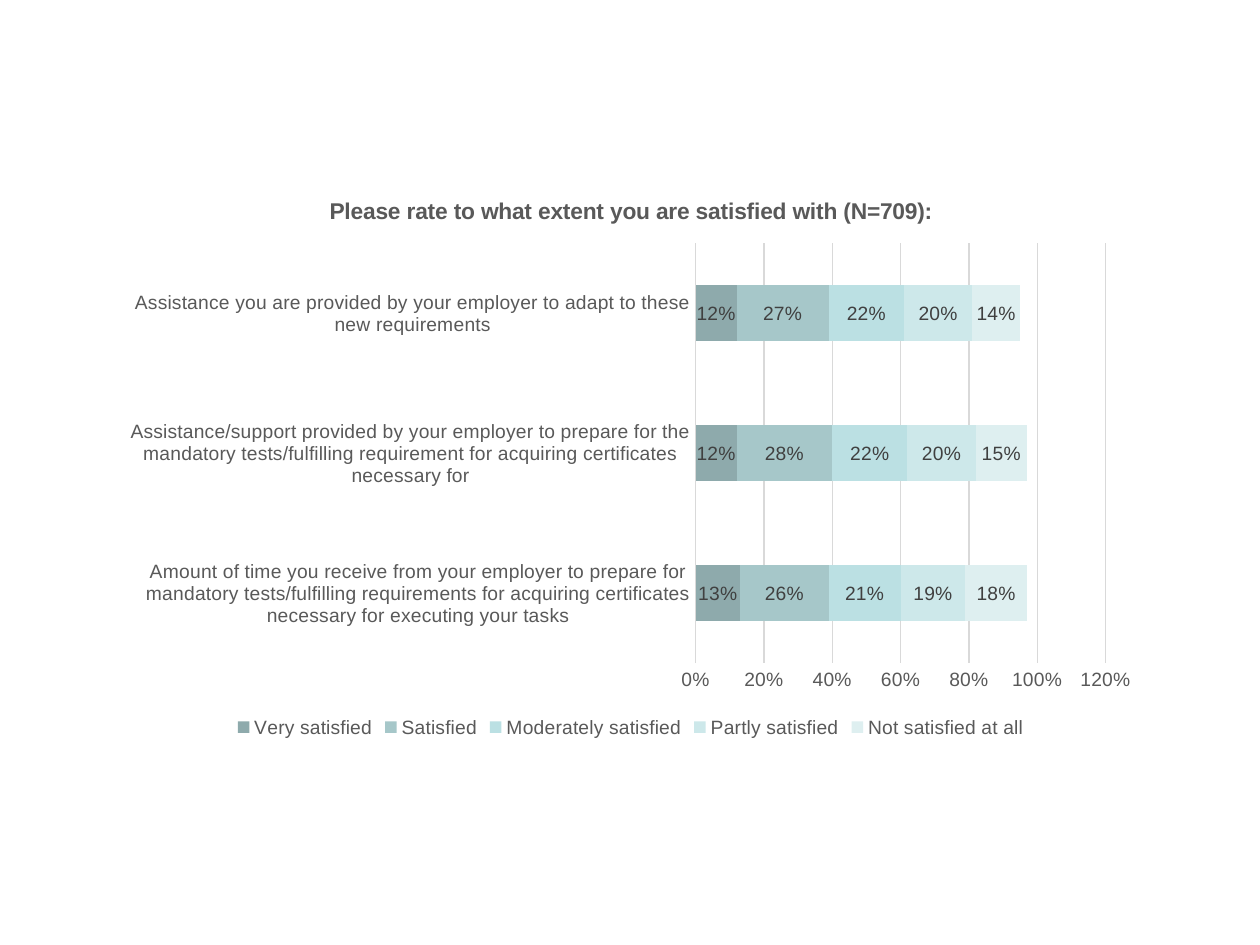
import pptx
import pptx.chart.data
import pptx.dml.color
import pptx.enum.chart
import pptx.util

RGBColor = pptx.dml.color.RGBColor
TEXT_GREY = RGBColor(0x59, 0x59, 0x59)
LABEL_GREY = RGBColor(0x40, 0x40, 0x40)
LINE_GREY = RGBColor(0xD9, 0xD9, 0xD9)

CATEGORIES = [
    "Amount of time you receive from your employer to prepare for mandatory "
    "tests/fulfilling requirements for acquiring certificates necessary for executing your tasks",
    "Assistance/support provided by your employer to prepare for the mandatory "
    "tests/fulfilling requirement for acquiring certificates necessary for",
    "Assistance you are provided by your employer to adapt to these new requirements",
]
RATINGS = [
    ("Very satisfied", (0.13, 0.12, 0.12), RGBColor(0x8E, 0xAA, 0xAC)),
    ("Satisfied", (0.26, 0.28, 0.27), RGBColor(0xA6, 0xC7, 0xC9)),
    ("Moderately satisfied", (0.21, 0.22, 0.22), RGBColor(0xBB, 0xE0, 0xE3)),
    ("Partly satisfied", (0.19, 0.20, 0.20), RGBColor(0xCD, 0xE8, 0xEA)),
    ("Not satisfied at all", (0.18, 0.15, 0.14), RGBColor(0xDE, 0xEF, 0xF0)),
]


def format_font(font, color, size=11, bold=False):
    values = {"name": "Arial", "size": pptx.util.Pt(size), "bold": bold}
    for attribute, value in values.items():
        setattr(font, attribute, value)
    font.color.rgb = color


def format_line(line):
    line.color.rgb = LINE_GREY
    line.width = pptx.util.Pt(0.75)


# Slide
presentation = pptx.Presentation()
presentation.slide_width = pptx.util.Inches(10)
presentation.slide_height = pptx.util.Inches(7.5)
slide = presentation.slides.add_slide(presentation.slide_layouts[6])

# Stacked bar chart
chart_data = pptx.chart.data.CategoryChartData(number_format="0%")
chart_data.categories = CATEGORIES
for name, shares, color in RATINGS:
    chart_data.add_series(name, shares)
chart = slide.shapes.add_chart(
    pptx.enum.chart.XL_CHART_TYPE.BAR_STACKED,
    pptx.util.Inches(0.87), pptx.util.Inches(1.39),
    pptx.util.Inches(8.27), pptx.util.Inches(4.51),
    chart_data,
).chart
format_font(chart.font, TEXT_GREY)

# Title
title_frame = chart.chart_title.text_frame
title_frame.text = "Please rate to what extent you are satisfied with (N=709):"
format_font(title_frame.paragraphs[0].runs[0].font, TEXT_GREY, size=13, bold=True)
chart.chart_title.include_in_layout = False

# Legend
chart.has_legend = True
chart.legend.position = pptx.enum.chart.XL_LEGEND_POSITION.BOTTOM
chart.legend.include_in_layout = False
format_font(chart.legend.font, TEXT_GREY)

# Axes
for axis in (chart.category_axis, chart.value_axis):
    axis.major_tick_mark = pptx.enum.chart.XL_TICK_MARK.NONE
    axis.minor_tick_mark = pptx.enum.chart.XL_TICK_MARK.NONE
    format_font(axis.tick_labels.font, TEXT_GREY)
format_line(chart.category_axis.format.line)
value_axis = chart.value_axis
scale = {"minimum_scale": 0, "maximum_scale": 1.2, "major_unit": 0.2,
         "has_major_gridlines": True}
for attribute, value in scale.items():
    setattr(value_axis, attribute, value)
value_axis.format.line.fill.background()
format_line(value_axis.major_gridlines.format.line)
value_axis.tick_labels.number_format = "0%"
value_axis.tick_labels.number_format_is_linked = False

# Bars and their labels
plot = chart.plots[0]
plot.vary_by_categories = False
plot.gap_width = 150
plot.overlap = 100
for series, (name, shares, color) in zip(plot.series, RATINGS):
    series.format.fill.solid()
    series.format.fill.fore_color.rgb = color
    labels = series.data_labels
    labels.show_value = True
    labels.number_format = "0%"
    labels.number_format_is_linked = False
    format_font(labels.font, LABEL_GREY)

presentation.save("out.pptx")
